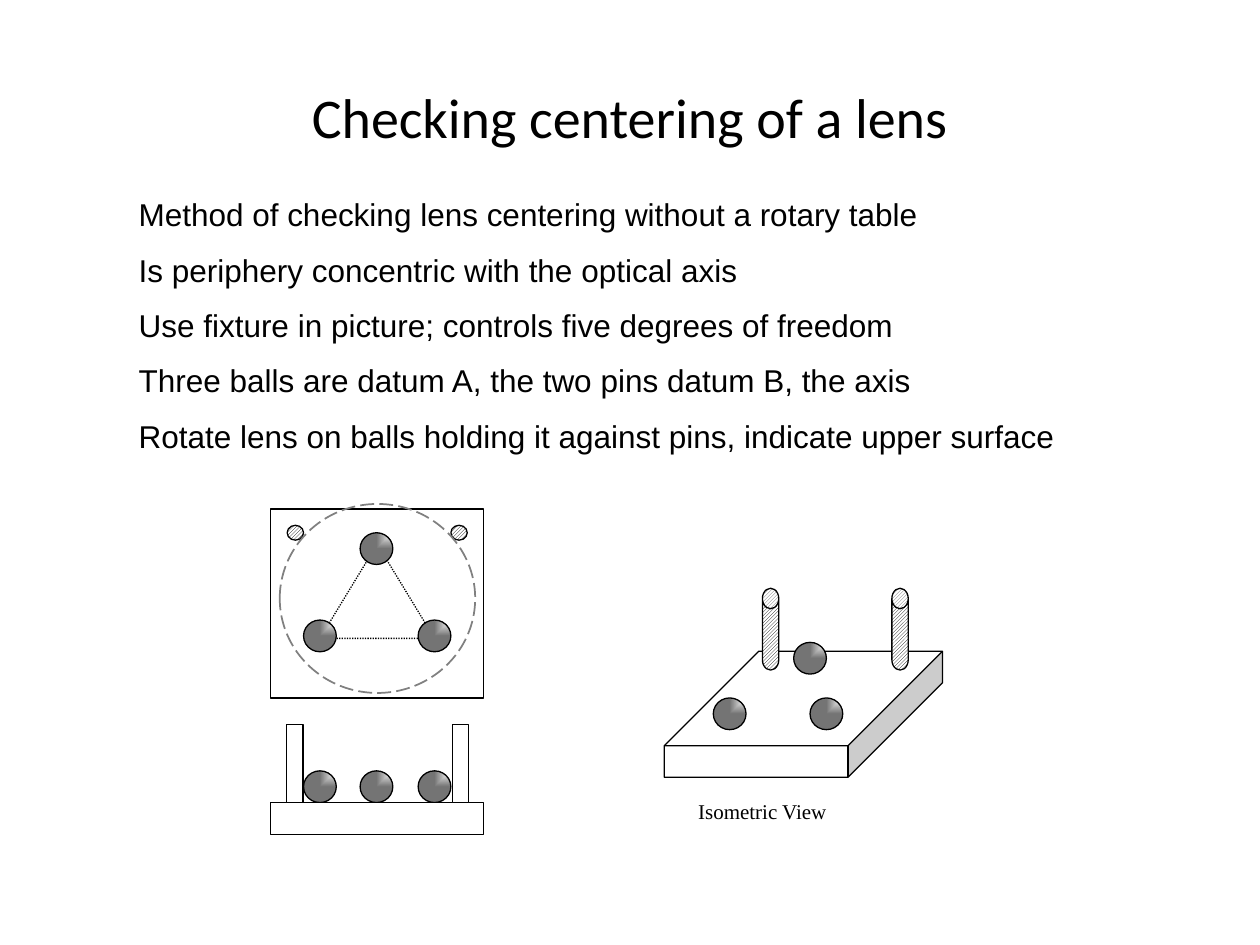
from lxml import etree
from pptx import Presentation
from pptx.dml.color import RGBColor
from pptx.enum.dml import MSO_LINE, MSO_PATTERN
from pptx.enum.shapes import MSO_SHAPE
from pptx.enum.text import MSO_ANCHOR, MSO_AUTO_SIZE, PP_ALIGN
from pptx.oxml.ns import qn
from pptx.util import Cm, Pt

RECT, OVAL, CUBE = MSO_SHAPE.RECTANGLE, MSO_SHAPE.OVAL, MSO_SHAPE.CUBE
CAN, TRIANGLE = MSO_SHAPE.CAN, MSO_SHAPE.ISOSCELES_TRIANGLE
DOT, DASH = MSO_LINE.ROUND_DOT, MSO_LINE.LONG_DASH
HATCH = MSO_PATTERN.LIGHT_UPWARD_DIAGONAL
COLORS = {name: RGBColor.from_string(value) for name, value in {
    "black": "000000", "white": "FFFFFF", "gray": "808080", "ball": "747474",
}.items()}


def add_part(kind, box, fill="white", line="black", width=0.75, dash=None, adj=None):
    sp = group.shapes.add_shape(kind, *[Cm(v) for v in box])
    sp.shadow.inherit = False
    if adj is not None:
        sp.adjustments[0] = adj
    sp.line.color.rgb = COLORS[line]
    sp.line.width = Pt(width)
    if dash is not None:
        sp.line.dash_style = dash
    if fill == "hatch":
        sp.fill.patterned()
        sp.fill.pattern = HATCH
        sp.fill.fore_color.rgb = COLORS["black"]
        sp.fill.back_color.rgb = COLORS["white"]
    elif fill == "ball":
        sp.fill.gradient()
        for stop, name, pos in zip(sp.fill.gradient_stops, ("white", "ball"), (0, 1)):
            stop.color.rgb = COLORS[name]
            stop.position = pos
        grad = sp._element.spPr.find(qn("a:gradFill"))
        grad.remove(grad.find(qn("a:lin")))
        focus = etree.SubElement(grad, qn("a:path"), {"path": "rect"})
        etree.SubElement(focus, qn("a:fillToRect"), {"l": "100000", "b": "100000"})
    elif fill is None:
        sp.fill.background()
    else:
        sp.fill.solid()
        sp.fill.fore_color.rgb = COLORS[fill]


def set_text(p, text, name, size):
    r = p.add_run()
    r.text = text
    for key, value in {"name": name, "size": Pt(size)}.items():
        setattr(r.font, key, value)
    r.font.color.rgb = COLORS["black"]


prs = Presentation()
prs.slide_width, prs.slide_height = Cm(25.4), Cm(19.05)
s = prs.slides.add_slide(prs.slide_layouts[1])

title, body = s.shapes.title, s.placeholders[1]
for sp, box, anchor in (
    (title, (1.27, 0.76, 22.86, 3.18), MSO_ANCHOR.MIDDLE),
    (body, (2.54, 3.81, 20.75, 5.61), MSO_ANCHOR.TOP),
):
    sp.left, sp.top, sp.width, sp.height = [Cm(v) for v in box]
    for key, value in {
        "word_wrap": True, "auto_size": MSO_AUTO_SIZE.NONE, "vertical_anchor": anchor,
    }.items():
        setattr(sp.text_frame, key, value)

p = title.text_frame.paragraphs[0]
p.alignment = PP_ALIGN.CENTER
set_text(p, "Checking centering of a lens", "Calibri", 32)

tf = body.text_frame
for i, text in enumerate((
    "Method of checking lens centering without a rotary table",
    "Is periphery concentric with the optical axis",
    "Use fixture in picture; controls five degrees of freedom",
    "Three balls are datum A, the two pins datum B, the axis",
    "Rotate lens on balls holding it against pins, indicate upper surface",
)):
    p = tf.add_paragraph() if i else tf.paragraphs[0]
    p.space_before = Pt(10)
    pPr = p._p.get_or_add_pPr()
    pPr.set("marL", "0")
    pPr.set("indent", "0")
    etree.SubElement(pPr, qn("a:buNone"))
    set_text(p, text, "Arial", 18)

group = s.shapes.add_group_shape()
ball_w, ball_h, pin_w = 0.66, 0.64, 0.33
left_x, mid_x, right_x = 6.12, 7.26, 8.43

add_part(RECT, (5.46, 10.26, 4.29, 3.81))
add_part(TRIANGLE, (6.45, 10.97, 2.31, 1.9), dash=DOT)
add_part(CUBE, (13.39, 13.13, 5.61, 2.54), adj=0.75)
for x, y in (
    (mid_x, 10.74), (left_x, 12.5), (right_x, 12.5),
    (left_x, 15.54), (mid_x, 15.54), (right_x, 15.54),
    (14.38, 14.07), (16.33, 14.07), (16, 12.95),
):
    add_part(OVAL, (x, y, ball_w, ball_h), "ball")
for x in (5.79, 9.09):
    add_part(OVAL, (x, 10.59, pin_w, 0.3), "hatch")
for x in (15.37, 17.98):
    add_part(CAN, (x, 11.86, pin_w, 1.65), "hatch", adj=1.25)
add_part(OVAL, (5.64, 10.16, 3.94, 3.81), None, "gray", 1, DASH)
add_part(RECT, (5.46, 16.18, 4.29, 0.64))
for x in (5.78, 9.12):
    add_part(RECT, (x, 14.6, pin_w, 1.58))

label = group.shapes.add_textbox(Cm(13.72), Cm(15.98), Cm(3.3), Cm(1.02))
label.text_frame.word_wrap = True
p = label.text_frame.paragraphs[0]
p.alignment = PP_ALIGN.CENTER
set_text(p, "Isometric View", "Times New Roman", 12)

prs.save("out.pptx")
